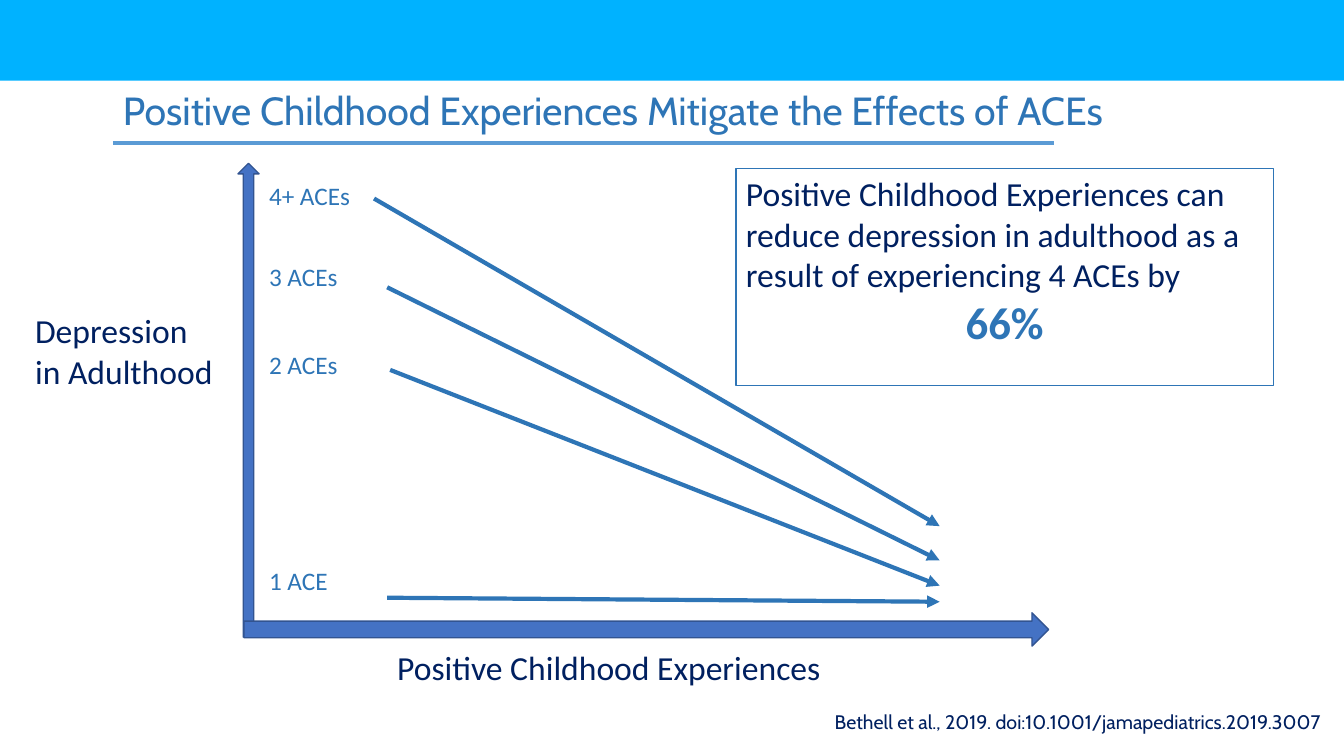
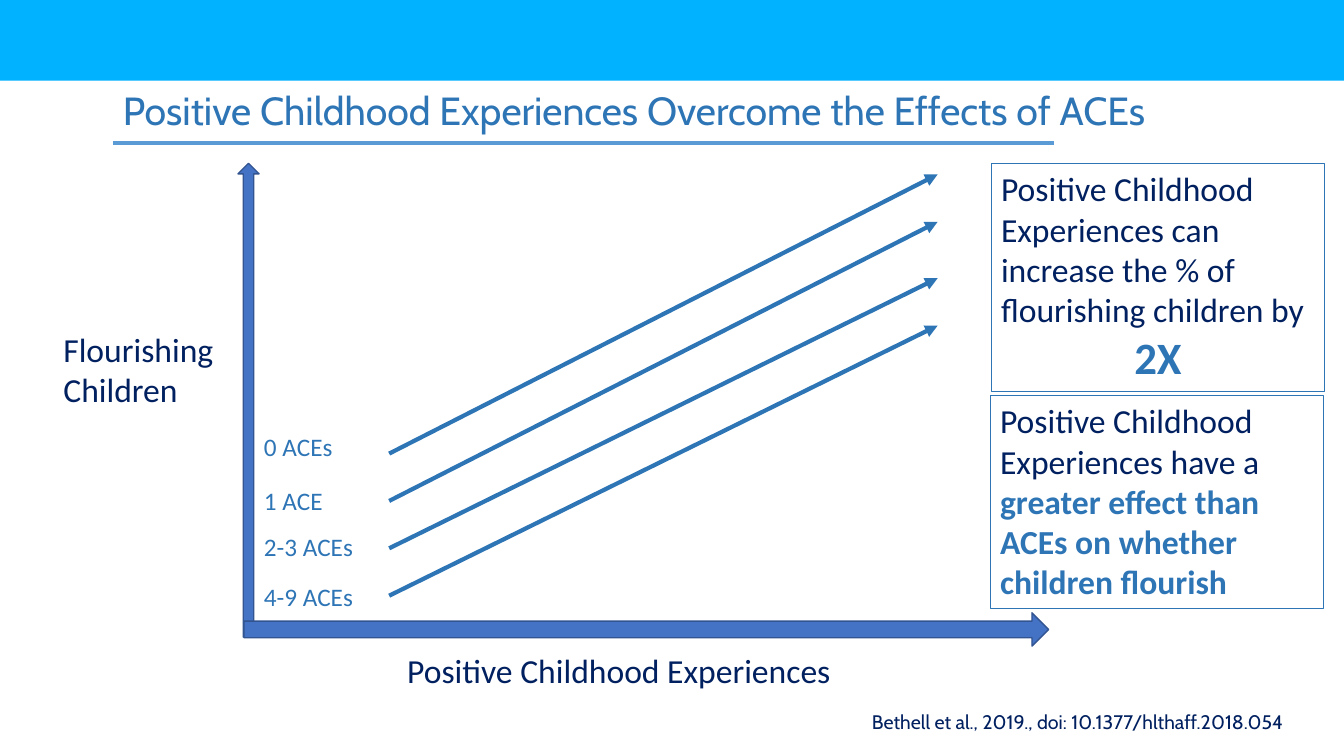
from dataclasses import dataclass, field
from lxml.etree import SubElement
from pptx import Presentation
from pptx.dml.color import RGBColor
from pptx.enum.shapes import MSO_CONNECTOR, MSO_SHAPE
from pptx.enum.text import MSO_ANCHOR, PP_ALIGN
from pptx.oxml.ns import qn
from pptx.util import Inches, Pt

# Grid: cells of a tenth of an inch
COLS, ROWS = 133.3, 75


def cells(n):
    return Inches(n / 10)


def style(name, size, color, **extra):
    return dict(name=name, size=Pt(size), color=RGBColor.from_string(color), **extra)


@dataclass(frozen=True)
class Theme:
    band: str = "00B2FF"
    rule: str = "5B9BD5"
    axis: str = "4472C4"
    axis_edge: str = "325491"
    accent: str = "2E75B6"
    text: dict = field(default_factory=lambda: {
        "title": style("Cabin", 28, "2E75B6"),
        "source": style("Cabin", 14, "002060"),
        "body": style("Calibri", 24, "002060"),
        "strong": style("Calibri", 24, "2E75B6", bold=True),
        "figure": style("Calibri", 32, "2E75B6", bold=True),
        "label": style("Calibri", 18, "2E75B6"),
    })


class Deck:
    def __init__(self, theme):
        self.theme = theme
        self.prs = Presentation()
        self.prs.slide_width, self.prs.slide_height = cells(COLS), cells(ROWS)
        self.s = None

    def shape(self, kind, x, y, w, h, fill, edge=None):
        sp = self.s.shapes.add_shape(kind, *map(cells, (x, y, w, h)))
        sp.shadow.inherit = False
        sp.fill.solid()
        sp.fill.fore_color.rgb = RGBColor.from_string(fill)
        if edge:
            self.outline(sp.line, edge, 1)
        else:
            sp.line.fill.background()

    def outline(self, line, color, width):
        line.color.rgb = RGBColor.from_string(color)
        line.width = Pt(width)

    def line(self, start, end, color, arrow=False):
        ends = map(cells, (*start, *end))
        c = self.s.shapes.add_connector(MSO_CONNECTOR.STRAIGHT, *ends)
        self.outline(c.line, color, 3)
        if arrow:
            SubElement(c.line._get_or_add_ln(), qn("a:tailEnd"), type="triangle")
        SubElement(c._element.spPr, qn("a:effectLst"))

    def text(self, x, y, w, h, *paragraphs, anchor=MSO_ANCHOR.TOP):
        """Each paragraph is (alignment, (text, style name), ...)."""
        sp = self.s.shapes.add_textbox(*map(cells, (x, y, w, h)))
        tf = sp.text_frame
        tf.word_wrap, tf.vertical_anchor = True, anchor
        for i, (align, *runs) in enumerate(paragraphs):
            p = tf.add_paragraph() if i else tf.paragraphs[0]
            p.alignment = align
            for words, name in runs:
                r = p.add_run()
                r.text = words
                for key, value in self.theme.text[name].items():
                    if key == "color":
                        r.font.color.rgb = value
                    else:
                        setattr(r.font, key, value)
        return sp

    def callout(self, x, y, w, h, *paragraphs):
        sp = self.text(x, y, w, h, *paragraphs)
        self.outline(sp.line, self.theme.accent, 0.75)

    def slide(self, title, source):
        t = self.theme
        self.s = self.prs.slides.add_slide(self.prs.slide_layouts[6])
        self.shape(MSO_SHAPE.RECTANGLE, 0, 0, COLS, 8, t.band)
        sp = self.text(11.2, 5.1, 115, 12.2, (LEFT, (title, "title")),
                       anchor=MSO_ANCHOR.MIDDLE)
        sp.text_frame.paragraphs[0].line_spacing = 0.9
        self.line((11.2, 14.2), (104.5, 14.2), t.rule)
        self.text(80.5, 69.9, 52.8, 3.4, (CENTER, (source, "source")))

    def axes(self, y_name, y_box, x_name, x_box):
        t = self.theme
        self.shape(MSO_SHAPE.UP_ARROW, 23.6, 16.2, 2.1, 47, t.axis, t.axis_edge)
        self.shape(MSO_SHAPE.RIGHT_ARROW, 24.2, 60.8, 79.8, 3.3, t.axis, t.axis_edge)
        for name, box in ((y_name, y_box), (x_name, x_box)):
            self.text(*box, (LEFT, (name, "body")))

    def trend(self, label, label_x, label_y, start, end):
        self.text(label_x, label_y, 12.3, 4, (LEFT, (label, "label")))
        self.line(start, end, self.theme.accent, arrow=True)


LEFT, CENTER = PP_ALIGN.LEFT, PP_ALIGN.CENTER
X_NAME = "Positive Childhood Experiences"


def main():
    d = Deck(Theme())

    # Depression falls with positive experiences
    d.slide("Positive Childhood Experiences Mitigate the Effects of ACEs",
            "Bethell et al., 2019. doi:10.1001/jamapediatrics.2019.3007")
    d.axes("Depression in Adulthood", (2.5, 30.3, 20.3, 12.1),
           X_NAME, (38.4, 63.7, 46.5, 8.1))
    for label, label_y, x, y, end_y in (
            ("4+ ACEs", 17.4, 37.1, 19.7, 52.2),
            ("3 ACEs", 25.4, 38.4, 28.5, 55.6),
            ("2 ACEs", 34.2, 38.7, 36.7, 58.1),
            ("1 ACE", 55.6, 38.4, 59.3, 59.7)):
        d.trend(label, 25.7, label_y, (x, y), (93.2, end_y))
    d.callout(73, 16.7, 53.3, 21.5,
              (LEFT, ("Positive Childhood Experiences can reduce depression in "
                      "adulthood as a result of experiencing 4 ACEs by", "body")),
              (CENTER, ("66%", "figure")))

    # Flourishing rises with positive experiences
    d.slide("Positive Childhood Experiences Overcome the Effects of ACEs",
            "Bethell et al., 2019., doi: 10.1377/hlthaff.2018.054")
    d.axes("Flourishing Children", (5.3, 32.1, 17.9, 12.1),
           X_NAME, (39.4, 64, 49.4, 5))
    for i, (label, label_y, end_y) in enumerate((
            ("0 ACEs", 42.3, 17.3),
            ("1 ACE", 47.7, 22),
            ("2-3 ACEs", 52.2, 27.6),
            ("4-9 ACEs", 57.2, 32.3))):
        d.trend(label, 25.2, label_y, (38.6, 45 + 4.7 * i), (93, end_y))
    d.callout(98.3, 16.2, 33.1, 22.6,
              (LEFT, ("Positive Childhood Experiences can increase the % of "
                      "flourishing children by", "body")),
              (CENTER, ("2X", "figure")))
    d.callout(98.2, 39.2, 33.1, 21.2,
              (LEFT, ("Positive Childhood Experiences have a ", "body"),
               ("greater effect than ACEs on whether children flourish", "strong")))

    d.prs.save("out.pptx")


if __name__ == "__main__":
    main()
